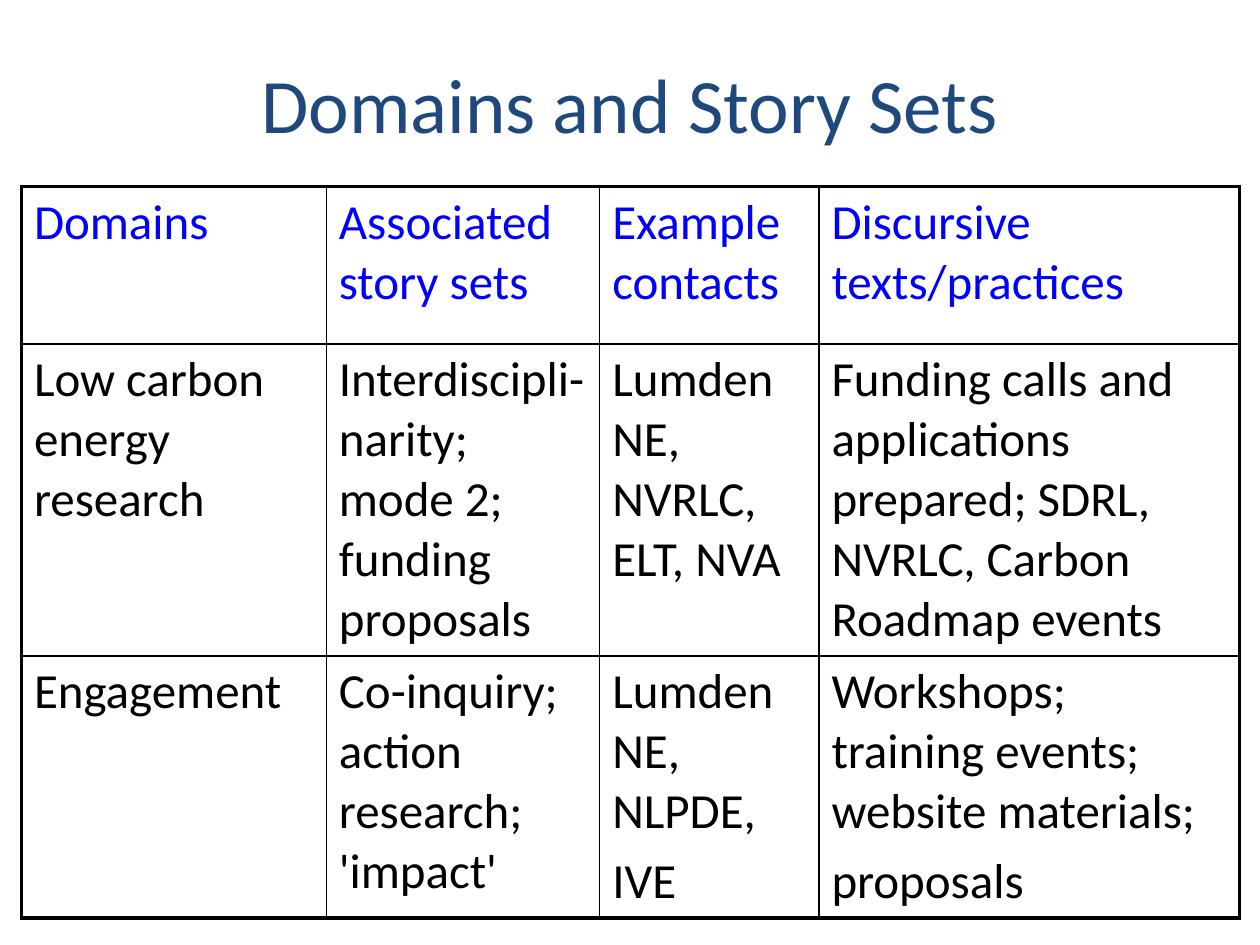
import lxml.etree
import pptx
import pptx.dml.color
import pptx.enum.text
import pptx.oxml.ns
import pptx.util

Inches = pptx.util.Inches
Pt = pptx.util.Pt

COLOURS = {"title": "1F497D", "heading": "0000FF", "text": "000000", "border": "000000"}
COLUMN_WIDTHS = [2.42, 2.17, 1.74, 3.34]
ROW_HEIGHTS = [1.25, 2.43, 2.06]
ROWS = [
    [["Domains"], ["Associated story sets"], ["Example contacts"], ["Discursive texts/practices"]],
    [
        ["Low carbon energy research"],
        ["Interdiscipli-narity; mode 2; funding proposals"],
        ["Lumden NE, NVRLC, ELT, NVA"],
        ["Funding calls and applications prepared; SDRL, NVRLC, Carbon Roadmap events"],
    ],
    [
        ["Engagement"],
        ["Co-inquiry; action research; 'impact'"],
        ["Lumden NE, NLPDE,", "IVE"],
        ["Workshops; training events; website materials;", "proposals"],
    ],
]


class SlideBuilder:
    font = "Calibri"
    title_size = 44
    body_size = 28
    outer_border = 2.25
    inner_border = 1

    def __init__(self, slide):
        self.slide = slide

    def add_run(self, para, text, size, colour):
        span = para.add_run()
        span.text = text
        span.font.name = self.font
        span.font.size = Pt(size)
        span.font.color.rgb = pptx.dml.color.RGBColor.from_string(COLOURS[colour])

    def title(self, text):
        box = self.slide.shapes.title
        box.left, box.top = Inches(0.5), Inches(0.3)
        box.width, box.height = Inches(9), Inches(1.03)
        box.text_frame.vertical_anchor = pptx.enum.text.MSO_ANCHOR.MIDDLE
        para = box.text_frame.paragraphs[0]
        para.alignment = pptx.enum.text.PP_ALIGN.CENTER
        self.add_run(para, text, self.title_size, "title")

    def border(self, cell, side, outer):
        qualify = pptx.oxml.ns.qn
        properties = cell._tc.get_or_add_tcPr()
        width = Pt(self.outer_border if outer else self.inner_border)
        line = lxml.etree.SubElement(properties, qualify("a:ln" + side), w=str(int(width)))
        fill = lxml.etree.SubElement(line, qualify("a:solidFill"))
        lxml.etree.SubElement(fill, qualify("a:srgbClr"), val=COLOURS["border"])

    def fill_cell(self, cell, lines, colour):
        cell.margin_left = cell.margin_right = Inches(0.1)
        cell.margin_top = cell.margin_bottom = Inches(0.05)
        cell.vertical_anchor = pptx.enum.text.MSO_ANCHOR.TOP
        frame = cell.text_frame
        for index, text in enumerate(lines):
            para = frame.add_paragraph() if index else frame.paragraphs[0]
            para.space_before = Pt(self.body_size * 0.2)
            self.add_run(para, text, self.body_size, colour)

    def table(self, left, top, widths, heights, rows):
        frame = self.slide.shapes.add_table(
            len(heights), len(widths), Inches(left), Inches(top),
            Inches(sum(widths)), Inches(sum(heights)),
        )
        table = frame.table
        table.first_row = table.horz_banding = False
        for column, width in zip(table.columns, widths):
            column.width = Inches(width)
        for row, height in zip(table.rows, heights):
            row.height = Inches(height)
        for r, row in enumerate(rows):
            for c, lines in enumerate(row):
                cell = table.cell(r, c)
                self.fill_cell(cell, lines, "text" if r else "heading")
                self.border(cell, "L", c == 0)
                self.border(cell, "R", c == len(widths) - 1)
                self.border(cell, "T", r == 0)
                self.border(cell, "B", r == len(heights) - 1)
                cell.fill.background()


def main():
    deck = pptx.Presentation()
    deck.slide_width, deck.slide_height = Inches(10), Inches(7.5)
    page = SlideBuilder(deck.slides.add_slide(deck.slide_layouts[5]))
    page.title("Domains and Story Sets")
    page.table(0.17, 1.48, COLUMN_WIDTHS, ROW_HEIGHTS, ROWS)
    deck.save("out.pptx")


if __name__ == "__main__":
    main()
